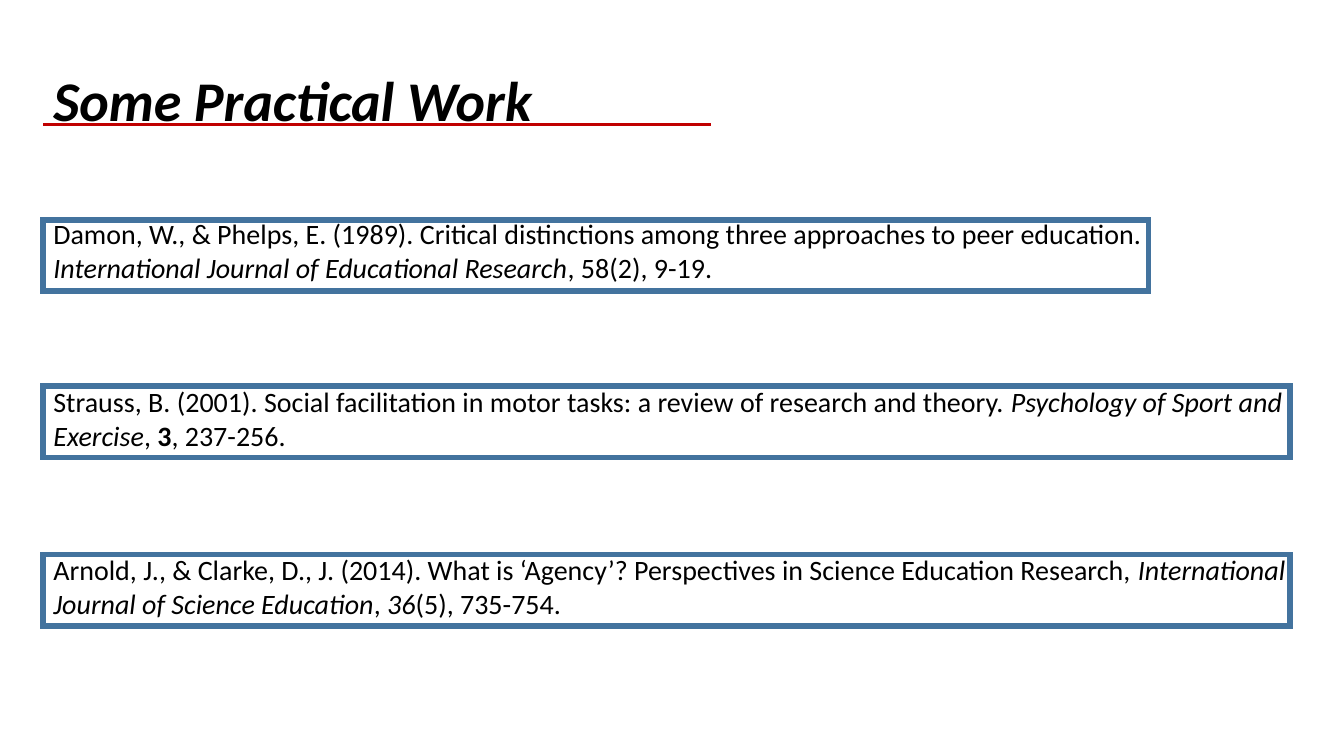
from dataclasses import dataclass

from lxml import etree
from pptx import Presentation
from pptx import util as u
from pptx.dml.color import RGBColor
from pptx.enum import shapes, text
from pptx.oxml import ns

BLACK = RGBColor(0x00, 0x00, 0x00)
BLUE = RGBColor(0x43, 0x73, 0x9E)
RED = RGBColor(0xC0, 0x00, 0x00)

LEFT = u.Cm(1.09)
WIDE = u.Cm(31.75)


@dataclass
class Run:
    text: str
    bold: bool = False
    italic: bool = False


@dataclass
class Frame:
    top: float
    width: float


WORKS = [
    [
        Run("Damon, W., & Phelps, E. (1989). Critical distinctions among "
            "three approaches to peer education. "),
        Run("International Journal of Educational Research", italic=True),
        Run(", 58(2), 9-19."),
    ],
    [
        Run("Strauss, B. (2001). Social facilitation in motor tasks: "
            "a review of research and theory. "),
        Run("Psychology of Sport and Exercise", italic=True),
        Run(", "),
        Run("3", bold=True),
        Run(", 237-256."),
    ],
    [
        Run("Arnold, J., & Clarke, D., J. (2014). What is ‘Agency’? "
            "Perspectives in Science Education Research, "),
        Run("International Journal of Science Education", italic=True),
        Run(", "),
        Run("36", italic=True),
        Run("(5), 735-754."),
    ],
]
FRAMES = [Frame(5.54, 27.86), Frame(9.73, 31.42), Frame(13.97, 31.42)]


def place(holder, top: float, height: float):
    """Move a placeholder and return its text frame, ready to fill."""
    holder.left, holder.top = LEFT, u.Cm(top)
    holder.width, holder.height = WIDE, u.Cm(height)
    frame = holder.text_frame
    frame.word_wrap = True
    frame.auto_size = text.MSO_AUTO_SIZE.NONE
    frame.vertical_anchor = text.MSO_ANCHOR.TOP
    return frame


def write(para, runs: list[Run], *, size: float, after: float = 0) -> None:
    """Fill a paragraph with formatted runs, flush left and unbulleted."""
    para.alignment = text.PP_ALIGN.LEFT
    para.space_before = u.Pt(0)
    para.space_after = u.Pt(after)
    props = para._p.get_or_add_pPr()
    props.set("marL", "0")
    props.set("indent", "0")
    etree.SubElement(props, ns.qn("a:buNone"))
    for part in runs:
        run = para.add_run()
        run.text = part.text
        font = run.font
        font.name, font.size = "Calibri", u.Pt(size)
        font.bold, font.italic = part.bold, part.italic
        font.color.rgb = BLACK


def box(slide, frame: Frame) -> None:
    """Draw an open, square-cornered frame around one reference."""
    rect = slide.shapes.add_shape(
        shapes.MSO_SHAPE.RECTANGLE,
        LEFT, u.Cm(frame.top), u.Cm(frame.width), u.Cm(1.8))
    rect.shadow.inherit = False
    rect.fill.background()
    rect.line.color.rgb = BLUE
    rect.line.width = u.Pt(4)
    edge = rect._element.spPr.find(ns.qn("a:ln"))
    etree.SubElement(edge, ns.qn("a:miter"), lim="800000")


def rule(slide, top: float, right: float) -> None:
    """Draw the line under the title."""
    line = slide.shapes.add_connector(
        shapes.MSO_CONNECTOR.STRAIGHT,
        LEFT, u.Cm(top), u.Cm(right), u.Cm(top))
    line.line.color.rgb = RED
    line.line.width = u.Pt(2.25)
    etree.SubElement(line._element.spPr, ns.qn("a:effectLst"))


def main() -> None:
    deck = Presentation()
    deck.slide_width, deck.slide_height = u.Cm(33.87), u.Cm(19.05)
    slide = deck.slides.add_slide(deck.slide_layouts[1])

    # Title
    head = place(slide.shapes.title, 1.52, 2)
    write(head.paragraphs[0],
          [Run("Some Practical Work", bold=True, italic=True)], size=40)
    rule(slide, 3.14, 17.91)

    # References
    body = place(slide.placeholders[1], 5.33, 11.1)
    for i, work in enumerate(WORKS):
        para = body.add_paragraph() if i else body.paragraphs[0]
        write(para, work, size=20, after=72)

    # Frames
    for frame in FRAMES:
        box(slide, frame)

    deck.save("out.pptx")


if __name__ == "__main__":
    main()
